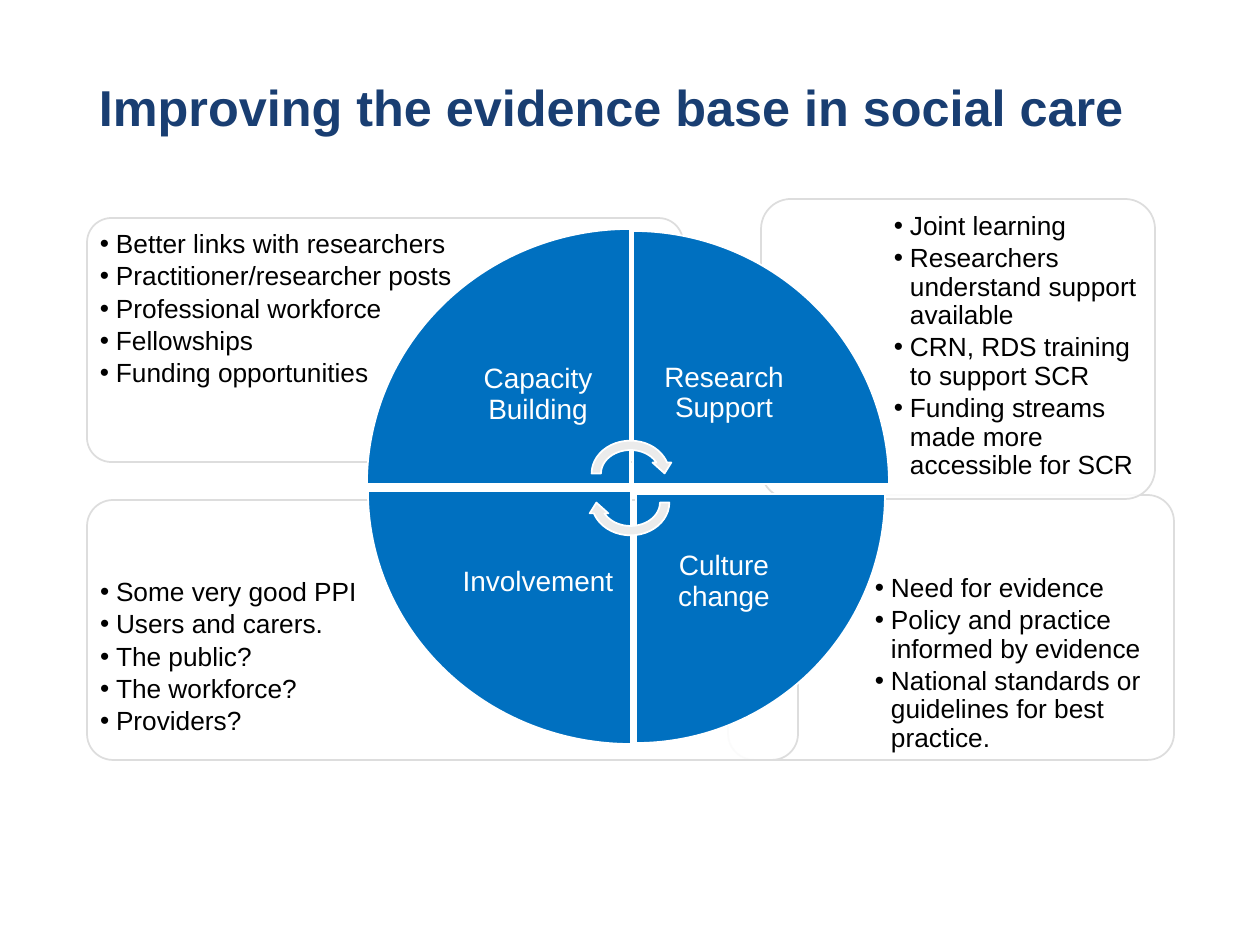
from dataclasses import dataclass
from lxml import etree
from pptx import Presentation
from pptx.dml.color import RGBColor as RGB
from pptx.enum.shapes import MSO_SHAPE as SHAPE
from pptx.enum.text import MSO_ANCHOR as ANCHOR, PP_ALIGN as ALIGN
from pptx.oxml.ns import qn
from pptx.util import Emu, Pt


@dataclass(frozen=True)
class Theme:
    font: str = "Arial"
    navy: RGB = RGB(0x19, 0x3E, 0x72)
    blue: RGB = RGB(0x00, 0x70, 0xC0)
    white: RGB = RGB(0xFF, 0xFF, 0xFF)
    black: RGB = RGB(0x00, 0x00, 0x00)
    border: RGB = RGB(0xDD, 0xDD, 0xDD)
    arrow: RGB = RGB(0xEB, 0xEB, 0xEB)
    title_size: float = 28.8
    label_size: float = 16
    bullet_size: float = 15


THEME = Theme()
PX_PER_INCH = 126

PANELS = [
    ((728, 495, 446, 265), (139, 72, 300, 186),
     ["Need for evidence", "Policy and practice informed by evidence",
      "National standards or guidelines for best practice."]),
    ((87, 500, 711, 260), (5, 71, 485, 184),
     ["Some very good PPI", "Users and carers.", "The public?",
      "The workforce?", "Providers?"]),
    ((761, 199, 394, 300), (125, 6, 263, 212),
     ["Joint learning", "Researchers understand support available",
      "CRN, RDS training to support SCR",
      "Funding streams made more accessible for SCR"]),
    ((87, 218, 596, 244), (5, 5, 406, 173),
     ["Better links with researchers", "Practitioner/researcher posts",
      "Professional workforce", "Fellowships", "Funding opportunities"]),
]

QUADRANTS = [
    ("Capacity Building", 0, (367, 229, 263, 255), (78, 76, 186, 180)),
    ("Research Support", 90, (633, 231, 256, 253), (1, 73, 180, 179)),
    ("Culture change", 180, (636, 494, 249, 249), (0, 0, 176, 176)),
    ("Involvement", 270, (368, 491, 263, 253), (77, 2, 186, 179)),
]


def px(length):
    return Emu(round(length * 914400 / PX_PER_INCH))


def inside(box, offset):
    return box[0] + offset[0], box[1] + offset[1], offset[2], offset[3]


def add_outline(slide, preset, box, fill, line, rotation=0):
    outline = slide.shapes.add_shape(preset, *map(px, box))
    outline.shadow.inherit = False
    outline.fill.solid()
    outline.fill.fore_color.rgb = fill
    outline.line.color.rgb = line
    outline.line.width = Pt(1)
    outline.rotation = rotation
    return outline


def add_frame(slide, box, inset, anchor):
    frame = slide.shapes.add_textbox(*map(px, box)).text_frame
    frame.word_wrap = True
    frame.vertical_anchor = anchor
    frame.margin_left = frame.margin_right = px(inset[0])
    frame.margin_top = frame.margin_bottom = px(inset[1])
    return frame


def add_words(paragraph, words, size, color, bold=False):
    paragraph.line_spacing = 0.9
    run = paragraph.add_run()
    run.text = words
    run.font.name = THEME.font
    run.font.size = Pt(size)
    run.font.bold = bold
    run.font.color.rgb = color


def add_bullet(paragraph, indent):
    properties = paragraph._p.get_or_add_pPr()
    properties.set("marL", str(px(indent)))
    properties.set("indent", str(-px(indent)))
    etree.SubElement(properties, qn("a:buFont"), typeface=THEME.font)
    etree.SubElement(properties, qn("a:buChar"), char="•")


def add_title(slide, box):
    frame = add_frame(slide, box, (12, 6), ANCHOR.MIDDLE)
    add_words(frame.paragraphs[0], "Improving the evidence base in social care",
              THEME.title_size, THEME.navy, bold=True)


def add_panel(slide, box, list_area, points):
    panel = add_outline(slide, SHAPE.ROUNDED_RECTANGLE, box, THEME.white, THEME.border)
    panel.adjustments[0] = 0.1
    fill_color = panel.fill._xPr.find(qn("a:solidFill"))[0]
    etree.SubElement(fill_color, qn("a:alpha"), val="90000")
    frame = add_frame(slide, inside(box, list_area), (8, 8), ANCHOR.TOP)
    for index, point in enumerate(points):
        paragraph = frame.add_paragraph() if index else frame.paragraphs[0]
        add_bullet(paragraph, 16)
        paragraph.space_after = Pt(2.25)
        add_words(paragraph, point, THEME.bullet_size, THEME.black)


def add_quadrant(slide, box, label_area, label, rotation):
    left, top, width, height = box
    if rotation % 180:
        shift = (width - height) / 2
        wedge = left + shift, top - shift, height, width
    else:
        wedge = box
    add_outline(slide, SHAPE.PIE_WEDGE, wedge, THEME.blue, THEME.white, rotation)
    frame = add_frame(slide, inside(box, label_area), (15, 15), ANCHOR.MIDDLE)
    frame.paragraphs[0].alignment = ALIGN.CENTER
    add_words(frame.paragraphs[0], label, THEME.label_size, THEME.white)


def add_cycle(slide, box):
    left, top, width, height = box
    arrow_height = 75
    for arrow_top, rotation in ((top, 0), (top + height - arrow_height, 180)):
        add_outline(slide, SHAPE.CIRCULAR_ARROW, (left, arrow_top, width, arrow_height),
                    THEME.arrow, THEME.white, rotation)


def main():
    deck = Presentation()
    deck.slide_width, deck.slide_height = px(1260), px(945)
    slide = deck.slides.add_slide(deck.slide_layouts[6])
    add_title(slide, (87, 50, 1086, 120))
    for box, list_area, points in PANELS:
        add_panel(slide, box, list_area, points)
    for label, rotation, box, label_area in QUADRANTS:
        add_quadrant(slide, box, label_area, label, rotation)
    add_cycle(slide, (587, 436, 87, 104))
    deck.save("out.pptx")


if __name__ == "__main__":
    main()
